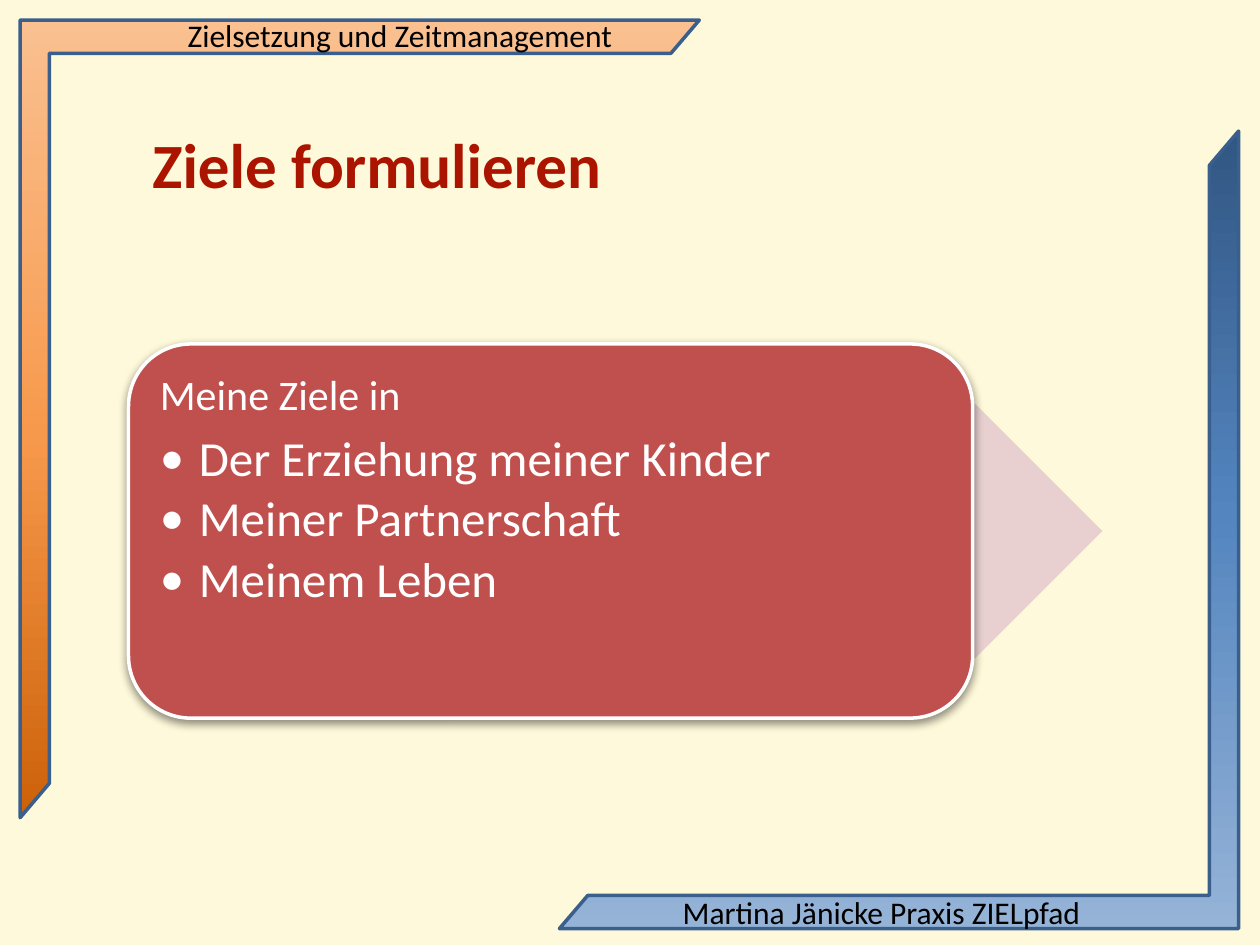
from dataclasses import dataclass
from typing import Optional

import lxml.etree
import pptx
import pptx.dml.color
import pptx.enum.shapes
import pptx.enum.text
import pptx.oxml
import pptx.oxml.ns
import pptx.util

RGBColor = pptx.dml.color.RGBColor
Shape = pptx.enum.shapes.MSO_SHAPE
Pt = pptx.util.Pt
qn = pptx.oxml.ns.qn

CREAM = RGBColor(0xFE, 0xF9, 0xDA)
BLACK = RGBColor(0, 0, 0)
WHITE = RGBColor(0xFF, 0xFF, 0xFF)
OUTLINE = RGBColor(0x3A, 0x5F, 0x8C)
RED = RGBColor(0xC0, 0x50, 0x4D)
PINK = RGBColor(0xE8, 0xD0, 0xD0)
DARK_RED = RGBColor(0xAB, 0x15, 0x00)
ORANGES = (RGBColor(0xCC, 0x61, 0x09), RGBColor(0xF7, 0x99, 0x4C), RGBColor(0xFA, 0xC0, 0x90))
BLUES = (RGBColor(0x31, 0x56, 0x83), RGBColor(0x54, 0x85, 0xBF), RGBColor(0x95, 0xB3, 0xD7))
STOPS = (0, 48, 100)

prs = pptx.Presentation()
prs.slide_width = pptx.util.Inches(10)
prs.slide_height = pptx.util.Inches(7.5)


@dataclass(frozen=True)
class Box:
    """Left, top, width and height in percent of the slide."""
    x: float
    y: float
    w: float
    h: float

    def emu(self) -> tuple[int, ...]:
        sides = (prs.slide_width, prs.slide_height) * 2
        return tuple(round(v * side / 100) for v, side in zip((self.x, self.y, self.w, self.h), sides))


@dataclass(frozen=True)
class Frame:
    box: Box
    colors: tuple[RGBColor, ...]
    rotation: int = 0


@dataclass(frozen=True)
class Line:
    text: str
    size: int
    color: RGBColor
    bold: bool = False
    spacing: Optional[float] = None
    after: float = 0
    bullet: bool = False


@dataclass(frozen=True)
class Label:
    box: Box
    lines: tuple[Line, ...]
    insets: tuple[float, float] = (0.1, 0.05)
    wrap: bool = True
    middle: bool = False


FRAMES = (
    Frame(Box(1.6, 2.13, 53.9, 84.4), ORANGES),
    Frame(Box(44.4, 13.87, 53.9, 84.4), BLUES, 180),
)
GOALS = ("Der Erziehung meiner Kinder", "Meiner Partnerschaft", "Meinem Leben")
ARROW = Box(16.5, 36.4, 71, 39.6)
PANEL = Box(10.2, 36.4, 67, 39.6)
LABELS = (
    Label(Box(13.9, 1.07, 36.1, 5.33), (Line("Zielsetzung und Zeitmanagement", 18, BLACK),), wrap=False),
    Label(Box(53.2, 93.87, 36.2, 5.33), (Line("Martina Jänicke Praxis ZIELpfad", 18, BLACK),), wrap=False),
    Label(
        Box(11.7, 38.27, 64.1, 35.73),
        (Line("Meine Ziele in", 24, WHITE, spacing=0.9, after=8.4),)
        + tuple(Line(goal, 28, WHITE, spacing=0.9, after=4.2, bullet=True) for goal in GOALS),
        insets=(0.1, 0.1),
    ),
    Label(
        Box(11.4, 13.2, 63.3, 9.2),
        (Line("Ziele formulieren", 36, DARK_RED, bold=True, spacing=0.9, after=4.5),),
        insets=(0.07, 0.04),
        middle=True,
    ),
)


def add_shape(s, kind, box: Box, fill: Optional[RGBColor] = None, line: Optional[RGBColor] = None):
    sp = s.shapes.add_shape(kind, *box.emu())
    sp.shadow.inherit = False
    if fill is not None:
        sp.fill.solid()
        sp.fill.fore_color.rgb = fill
    if line is None:
        sp.line.fill.background()
    else:
        sp.line.color.rgb = line
        sp.line.width = Pt(2)
    return sp


def add_frame(s, frame: Frame) -> None:
    sp = add_shape(s, Shape.HALF_FRAME, frame.box, line=OUTLINE)
    sp.adjustments[0] = 0.049
    sp.adjustments[1] = 0.043
    sp.rotation = frame.rotation
    sp.fill.gradient()
    sp.fill.gradient_angle = 90
    stops = sp._element.spPr.find(qn("a:gradFill")).find(qn("a:gsLst"))
    for old in list(stops):
        stops.remove(old)
    for pos, color in zip(STOPS, frame.colors):
        gs = lxml.etree.SubElement(stops, qn("a:gs"), pos=str(pos * 1000))
        lxml.etree.SubElement(gs, qn("a:srgbClr"), val=str(color))


def add_shadow(sp) -> None:
    effects = sp._element.spPr.find(qn("a:effectLst"))
    shadow = lxml.etree.SubElement(
        effects, qn("a:outerShdw"), blurRad=str(Pt(5)), dist=str(Pt(2)), dir="5400000", rotWithShape="0"
    )
    color = lxml.etree.SubElement(shadow, qn("a:srgbClr"), val=str(BLACK))
    lxml.etree.SubElement(color, qn("a:alpha"), val="43000")


def add_bullet(p) -> None:
    indent = pptx.util.Inches(0.31)
    pPr = p._p.get_or_add_pPr()
    pPr.set("marL", str(indent))
    pPr.set("indent", str(-indent))
    lxml.etree.SubElement(pPr, qn("a:buFont"), typeface="Calibri")
    lxml.etree.SubElement(pPr, qn("a:buChar"), char="•")


def add_label(s, label: Label) -> None:
    tf = s.shapes.add_textbox(*label.box.emu()).text_frame
    tf.word_wrap = label.wrap
    if not label.wrap:
        tf.auto_size = pptx.enum.text.MSO_AUTO_SIZE.SHAPE_TO_FIT_TEXT
    if label.middle:
        tf.vertical_anchor = pptx.enum.text.MSO_ANCHOR.MIDDLE
    across, down = (pptx.util.Inches(v) for v in label.insets)
    tf.margin_left = tf.margin_right = across
    tf.margin_top = tf.margin_bottom = down
    for i, line in enumerate(label.lines):
        p = tf.add_paragraph() if i else tf.paragraphs[0]
        p.line_spacing = line.spacing
        p.space_after = Pt(line.after)
        if line.bullet:
            p.level = 1
            add_bullet(p)
        r = p.add_run()
        r.text = line.text
        r.font.name = "Calibri"
        r.font.size = Pt(line.size)
        r.font.bold = line.bold
        r.font.color.rgb = line.color


def main() -> None:
    s = prs.slides.add_slide(prs.slide_layouts[6])
    s.background.fill.solid()
    s.background.fill.fore_color.rgb = CREAM
    for frame in FRAMES:
        add_frame(s, frame)
    add_shape(s, Shape.RIGHT_ARROW, ARROW, PINK)
    add_shadow(add_shape(s, Shape.ROUNDED_RECTANGLE, PANEL, RED, WHITE))
    for label in LABELS:
        add_label(s, label)
    prs.save("out.pptx")


if __name__ == "__main__":
    main()
